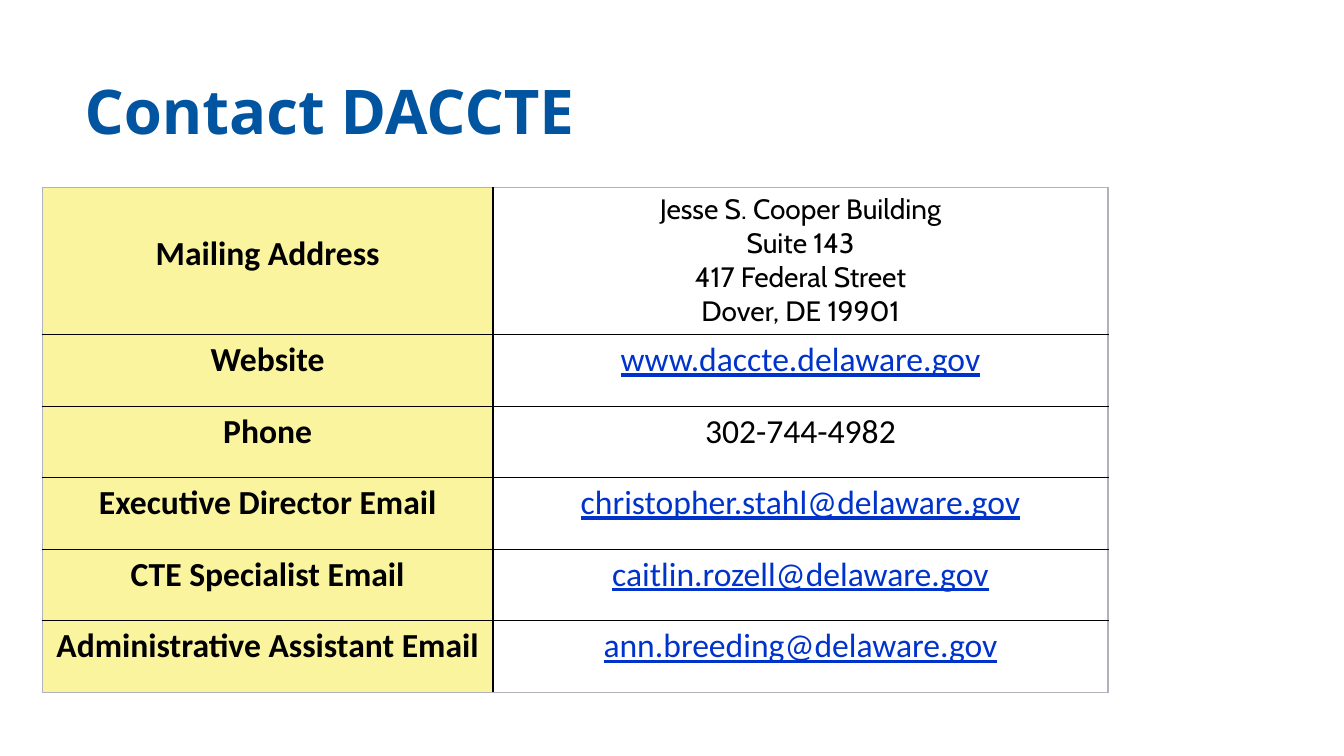
"""Build the Contact DACCTE slide."""
from lxml.etree import SubElement
from pptx import Presentation
from pptx.dml.color import RGBColor
from pptx.enum.text import PP_ALIGN
from pptx.oxml.ns import qn
from pptx.util import Inches, Pt

BLUE = RGBColor(0x01, 0x54, 0x9F)
LINK = RGBColor(0x00, 0x33, 0xCC)
BLACK = RGBColor(0x00, 0x00, 0x00)
GRAY = RGBColor(0xB2, 0xB2, 0xBC)
YELLOW = RGBColor(0xFB, 0xF4, 0x9E)
WHITE = RGBColor(0xFF, 0xFF, 0xFF)

CONTACTS = [
    ("Mailing Address", ["Jesse S. Cooper Building", "Suite 143",
                         "417 Federal Street", "Dover, DE 19901"]),
    ("Website", ["www.daccte.delaware.gov"]),
    ("Phone", ["302-744-4982"]),
    ("Executive Director Email", ["christopher.stahl@delaware.gov"]),
    ("CTE Specialist Email", ["caitlin.rozell@delaware.gov"]),
    ("Administrative Assistant Email", ["ann.breeding@delaware.gov"]),
]


def write(tf, lines, font="Calibri", size=24, color=BLACK, bold=False,
          underline=False, align=PP_ALIGN.CENTER):
    for i, line in enumerate(lines):
        p = tf.paragraphs[0] if i == 0 else tf.add_paragraph()
        p.alignment = align
        r = p.add_run()
        r.text = line
        r.font.name = font
        r.font.size = Pt(size)
        r.font.color.rgb = color
        r.font.bold = bold
        r.font.underline = underline


def add_border(cell, side, color):
    ln = SubElement(cell._tc.get_or_add_tcPr(), qn(f"a:ln{side}"), w=str(Pt(1)))
    fill = SubElement(ln, qn("a:solidFill"))
    SubElement(fill, qn("a:srgbClr"), val=str(color))


prs = Presentation()
prs.slide_width = Inches(13.33)
prs.slide_height = Inches(7.5)
s = prs.slides.add_slide(prs.slide_layouts[6])

title = s.shapes.add_textbox(Inches(0.74), Inches(0.67), Inches(10.12), Inches(1.44))
title.text_frame.word_wrap = True
write(title.text_frame, ["Contact DACCTE"], font="Open Sans", size=44,
      color=BLUE, bold=True, align=PP_ALIGN.LEFT)

last = len(CONTACTS) - 1
table = s.shapes.add_table(len(CONTACTS), 2, Inches(0.42), Inches(1.86),
                           Inches(10.57), Inches(5.01)).table
table.first_row = False
table.horz_banding = False
table.columns[0].width = Inches(4.47)
table.columns[1].width = Inches(6.1)

for i, (label, lines) in enumerate(CONTACTS):
    table.rows[i].height = Inches(1.46 if i == 0 else 0.71)
    label_cell, value_cell = table.cell(i, 0), table.cell(i, 1)
    for j, cell in enumerate((label_cell, value_cell)):
        add_border(cell, "L", GRAY if j == 0 else BLACK)
        add_border(cell, "R", GRAY if j == 1 else BLACK)
        add_border(cell, "T", GRAY if i == 0 else BLACK)
        add_border(cell, "B", GRAY if i == last else BLACK)
        cell.fill.solid()
        cell.fill.fore_color.rgb = YELLOW if j == 0 else WHITE

    write(label_cell.text_frame, [label], bold=True)
    if len(lines) > 1:
        label_cell.margin_top = Inches(0.46)
        write(value_cell.text_frame, lines, font="Cabin", size=20)
    else:
        is_link = ".gov" in lines[0]
        write(value_cell.text_frame, lines, color=LINK if is_link else BLACK,
              underline=is_link)

prs.save("out.pptx")
